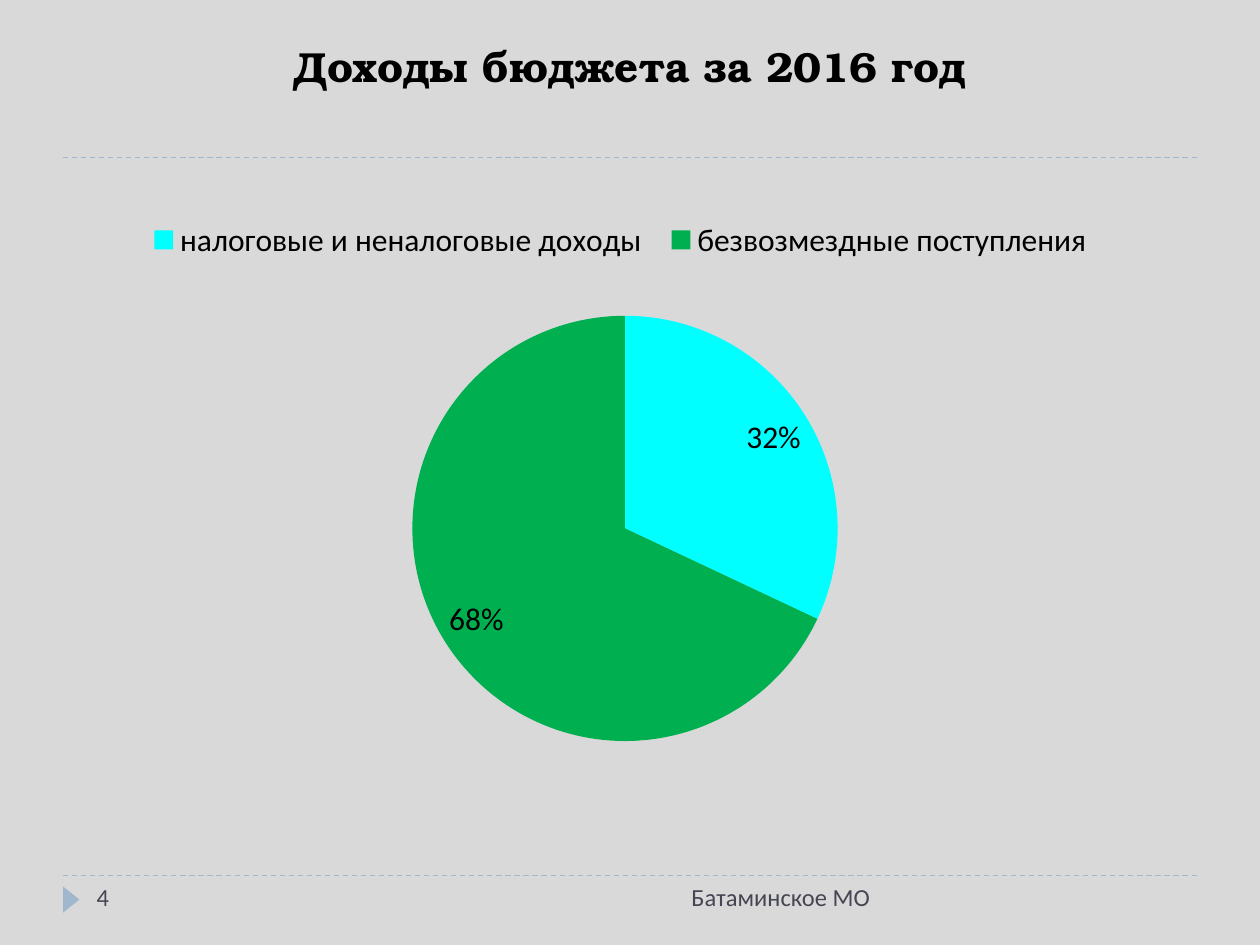
from collections import namedtuple

from lxml import etree
from pptx import Presentation
from pptx.chart.data import CategoryChartData
from pptx.dml.color import RGBColor
from pptx.enum.chart import XL_CHART_TYPE, XL_LABEL_POSITION, XL_LEGEND_POSITION
from pptx.enum.dml import MSO_LINE
from pptx.enum.shapes import MSO_CONNECTOR, MSO_SHAPE
from pptx.enum.text import MSO_ANCHOR, PP_ALIGN
from pptx.oxml import parse_xml
from pptx.oxml.ns import qn
from pptx.util import Cm, Pt

PIE = XL_CHART_TYPE.PIE
BEST_FIT = XL_LABEL_POSITION.BEST_FIT
LEGEND_TOP = XL_LEGEND_POSITION.TOP
DASH = MSO_LINE.DASH
STRAIGHT = MSO_CONNECTOR.STRAIGHT
TRIANGLE = MSO_SHAPE.ISOSCELES_TRIANGLE
BOTTOM, TOP = MSO_ANCHOR.BOTTOM, MSO_ANCHOR.TOP
LEFT, CENTER, RIGHT = PP_ALIGN.LEFT, PP_ALIGN.CENTER, PP_ALIGN.RIGHT

BACKGROUND, ACCENT, MUTED, BLACK = "D9D9D9", "9FB8CD", "464653", "000000"
BODY_FONT, TITLE_FONT = "Calibri", "TeX Gyre Bonum"
INCOME = [
    ("налоговые и неналоговые доходы", 32, "00FFFF"),
    ("безвозмездные поступления", 68, "00B050"),
]

Box = namedtuple("Box", "left top width height")
PLOT_AREA = Box(0.095, 0.261, 0.809, 0.649)
LEGEND_AREA = Box(0.02, 0.11, 0.95, 0.07)


def paint(target, color):
    """Give a fill a solid colour."""
    target.solid()
    target.fore_color.rgb = RGBColor.from_string(color)


def style_font(font, name, size, color, bold=False):
    """Set typeface, size, colour and weight."""
    font.name, font.size, font.bold = name, Pt(size), bold
    font.color.rgb = RGBColor.from_string(color)


def write(shape, text, align, anchor, **style):
    """Fill a shape with one formatted line of text."""
    frame = shape.text_frame
    frame.word_wrap = True
    frame.vertical_anchor = anchor
    frame.text = text
    para = frame.paragraphs[0]
    para.alignment = align
    style_font(para.runs[0].font, **style)


def add_rule(page, left, top, width):
    """Draw a dashed horizontal rule."""
    rule = page.shapes.add_connector(STRAIGHT, Cm(left), Cm(top), Cm(left + width), Cm(top))
    paint(rule.line.fill, ACCENT)
    rule.line.width = Pt(0.75)
    rule.line.dash_style = DASH
    etree.SubElement(rule._element.spPr, qn("a:effectLst"))


def add_header(page, box):
    """Place the title at the top of the box and a rule along its bottom."""
    add_rule(page, box.left, box.top + box.height, box.width)
    title = page.shapes.title
    title.left, title.top = Cm(box.left), Cm(box.top)
    title.width, title.height = Cm(box.width), Cm(1.96)
    write(title, "Доходы бюджета за 2016 год", CENTER, BOTTOM,
          name=TITLE_FONT, size=24, color=BLACK, bold=True)


def add_income_chart(page, box):
    """Place the income pie with its legend on top."""
    names, values, colors = zip(*INCOME)
    data = CategoryChartData(number_format="#,##0")
    data.categories = names
    data.add_series("Series 1", values)
    chart = page.shapes.add_chart(PIE, *map(Cm, box), data).chart
    style_font(chart.font, BODY_FONT, 18, BLACK)
    chart.has_title = False
    chart.has_legend = True
    chart.legend.position = LEGEND_TOP
    chart.legend.include_in_layout = False

    plot = chart.plots[0]
    plot.vary_by_categories = True
    for index, color in enumerate(colors):
        paint(plot.series[0].points[index].format.fill, color)
    plot.has_data_labels = True
    labels = plot.data_labels
    labels.show_percentage, labels.show_value = True, False
    labels.number_format, labels.number_format_is_linked = "0%", False
    labels.position = BEST_FIT
    style_font(labels.font, BODY_FONT, 18, BLACK)

    set_layout(chart._chartSpace.chart.plotArea, 0, PLOT_AREA,
               '<c:layoutTarget val="inner"/>')
    set_layout(chart.legend._element, 1, LEGEND_AREA)


def set_layout(element, index, area, target=""):
    """Place a chart part by fractions of the chart."""
    for old in element.findall(qn("c:layout")):
        element.remove(old)
    modes = "".join(f'<c:{axis}Mode val="edge"/>' for axis in "xy")
    sizes = "".join(f'<c:{key} val="{value}"/>' for key, value in zip("xywh", area))
    element.insert(index, parse_xml(
        '<c:layout xmlns:c="http://schemas.openxmlformats.org/drawingml/2006/chart">'
        f'<c:manualLayout>{target}{modes}{sizes}</c:manualLayout></c:layout>'))


def add_footer(page, box):
    """Place the rule, page marker, page number and municipality name."""
    add_rule(page, box.left, box.top, box.width)
    marker = page.shapes.add_shape(
        TRIANGLE, Cm(box.left - 0.1), Cm(box.top + 0.32), Cm(0.53), Cm(0.33))
    marker.rotation = 90
    marker.shadow.inherit = False
    paint(marker.fill, ACCENT)
    marker.line.fill.background()
    for text, offset, width, align in [("4", 0.43, 5.5, LEFT),
                                       ("Батаминское МО", 6.79, 9.73, RIGHT)]:
        label = page.shapes.add_textbox(
            Cm(box.left + offset), Cm(box.top), Cm(width), Cm(box.height))
        write(label, text, align, TOP, name=BODY_FONT, size=14, color=MUTED)


def main():
    """Build and save the deck."""
    deck = Presentation()
    deck.slide_width, deck.slide_height = Cm(25.4), Cm(19.05)
    page = deck.slides.add_slide(deck.slide_layouts[5])
    paint(page.background.fill, BACKGROUND)
    add_header(page, Box(1.27, 0, 22.86, 3.17))
    add_income_chart(page, Box(2.31, 2.92, 20.6, 13.21))
    add_footer(page, Box(1.27, 17.65, 22.86, 1.02))
    deck.save("out.pptx")


if __name__ == "__main__":
    main()
